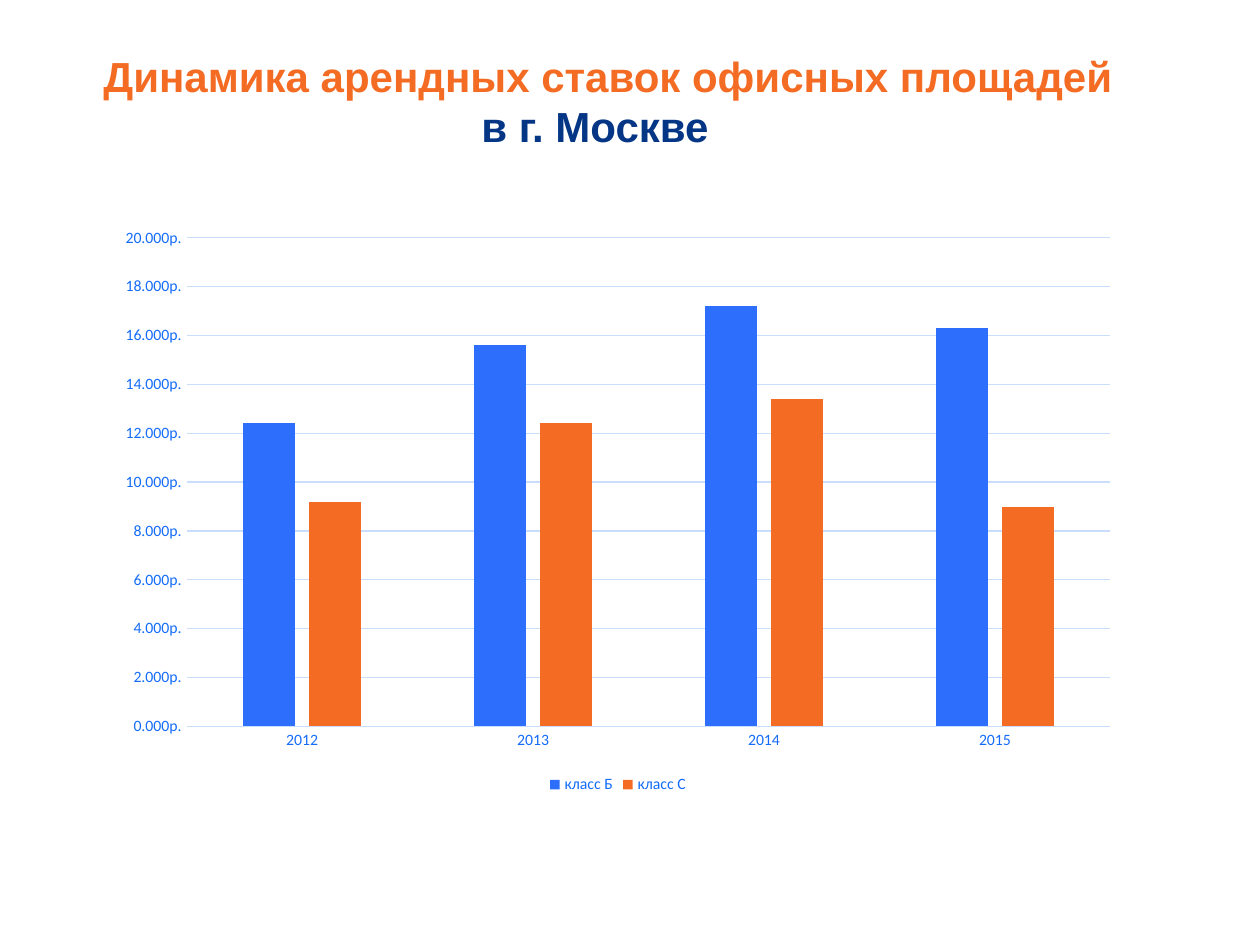
import pptx
import pptx.util
import pptx.dml.color
import pptx.chart.data
import pptx.enum.chart

PX = 914400 // 126
COLORS = {"orange": "F46C24", "navy": "043685", "blue": "2D6EFD",
          "label": "146CF8", "grid": "C9DDFD"}


def rgb(name):
    return pptx.dml.color.RGBColor.from_string(COLORS[name])


def style_font(font, face, size, color):
    font.name = face
    font.size = pptx.util.Pt(size)
    font.color.rgb = rgb(color)


deck = pptx.Presentation()
deck.slide_width = 1260 * PX
deck.slide_height = 945 * PX
slide = deck.slides.add_slide(deck.slide_layouts[6])

# Title: the second line is indented under the first
title = slide.shapes.add_textbox(91 * PX, 44 * PX, 1056 * PX, 369 * PX).text_frame
title.word_wrap = True
title_lines = [("Динамика арендных ставок офисных площадей", "orange", 0),
               ("в г. Москве", "navy", 378)]
for number, (wording, color, indent) in enumerate(title_lines):
    line = title.add_paragraph() if number else title.paragraphs[0]
    line._p.get_or_add_pPr().set("marL", str(indent * PX))
    run = line.add_run()
    run.text = wording
    style_font(run.font, "Arial", 24, color)
    run.font.bold = True

# Rent rates by office class
rates = pptx.chart.data.CategoryChartData()
rates.categories = ["2012", "2013", "2014", "2015"]
rates.add_series("класс Б", [12.4, 15.6, 17.2, 16.3])
rates.add_series("класс С", [9.2, 12.4, 13.4, 9])
chart = slide.shapes.add_chart(
    pptx.enum.chart.XL_CHART_TYPE.COLUMN_CLUSTERED,
    105 * PX, 217 * PX, 1026 * PX, 582 * PX, rates).chart
chart.has_title = False
style_font(chart.font, "Calibri", 10, "navy")

plot = chart.plots[0]
plot.vary_by_categories = False
plot.gap_width = 219
plot.overlap = -27
for office_class, color in zip(plot.series, ["blue", "orange"]):
    office_class.format.fill.solid()
    office_class.format.fill.fore_color.rgb = rgb(color)

years, rubles = chart.category_axis, chart.value_axis
for axis in (years, rubles):
    axis.major_tick_mark = pptx.enum.chart.XL_TICK_MARK.NONE
    axis.minor_tick_mark = pptx.enum.chart.XL_TICK_MARK.NONE
    style_font(axis.tick_labels.font, "Calibri", 9, "label")

rubles.minimum_scale = 0
rubles.maximum_scale = 20
rubles.major_unit = 2
rubles.tick_labels.number_format = '#,##0.000"р."'
rubles.tick_labels.number_format_is_linked = False
rubles.format.line.fill.background()
rubles.has_major_gridlines = True
for rule in (years.format.line, rubles.major_gridlines.format.line):
    rule.color.rgb = rgb("grid")
    rule.width = pptx.util.Pt(0.75)

chart.has_legend = True
chart.legend.position = pptx.enum.chart.XL_LEGEND_POSITION.BOTTOM
chart.legend.include_in_layout = False
style_font(chart.legend.font, "Calibri", 9, "label")

deck.save("out.pptx")
